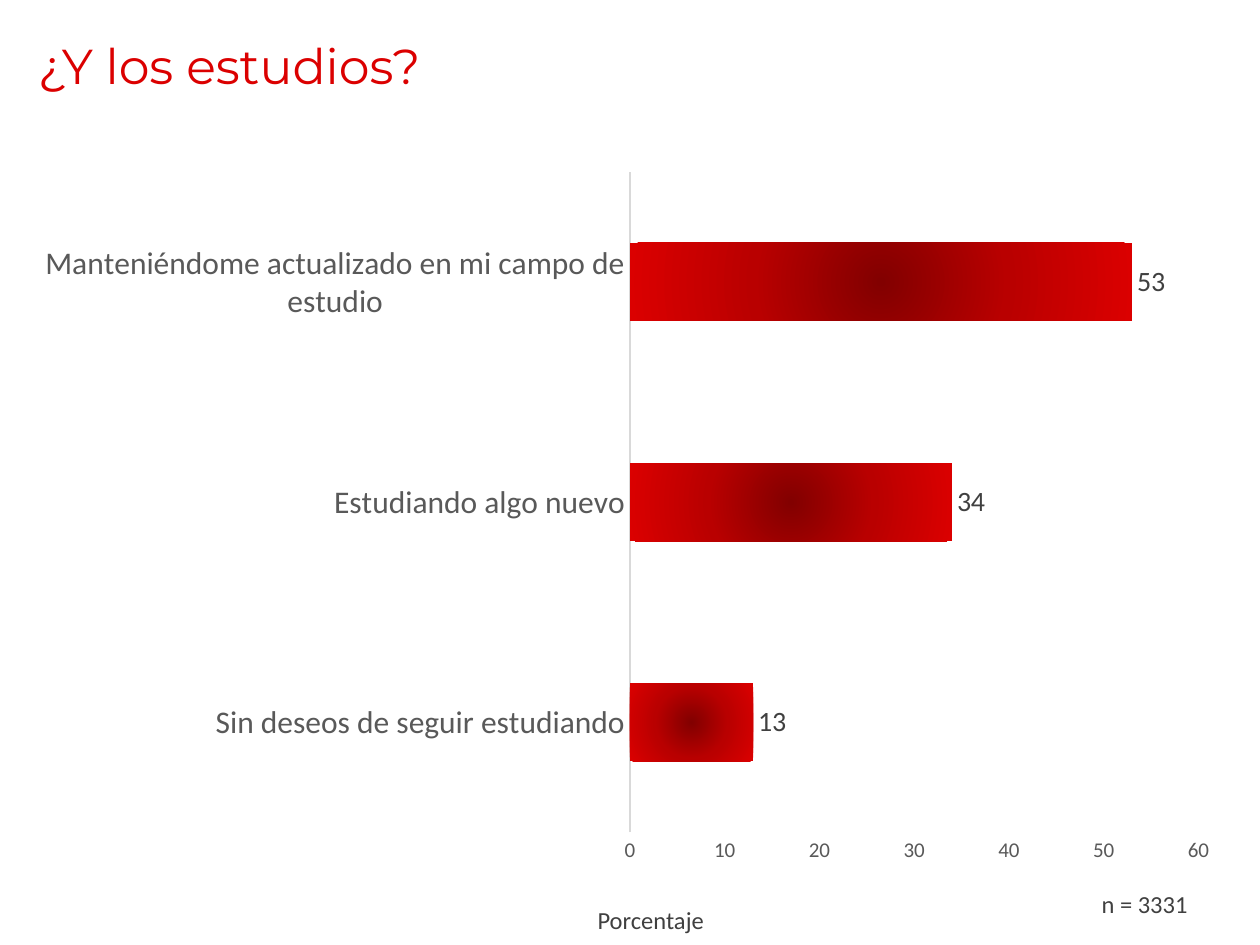
from pptx import Presentation
from pptx.chart.data import CategoryChartData
from pptx.dml.color import RGBColor
from pptx.enum.chart import XL_CHART_TYPE, XL_LABEL_POSITION, XL_TICK_MARK
from pptx.enum.text import MSO_ANCHOR, PP_ALIGN
from pptx.oxml import parse_xml
from pptx.oxml.ns import nsdecls
from pptx.util import Inches, Pt

RED, DARK, GREY, LINE = "DB0000", "404040", "595959", "D9D9D9"
STUDY = {
    "Sin deseos de seguir estudiando": 13,
    "Estudiando algo nuevo": 34,
    "Manteniéndome actualizado en mi campo de estudio": 53,
}
STOPS = [(0, "820000"), (50, "B90000"), (100, RED)]
PLOT = {"x": 0.5, "y": 0.02, "w": 0.47, "h": 0.92}


def color(code):
    """Turn a hex string into a colour."""
    return RGBColor.from_string(code)


def style(font, size, code, name="Calibri"):
    """Set size, colour and face of a font."""
    font.size, font.name = Pt(size), name
    font.color.rgb = color(code)


def place(shape, left, top, width, height):
    """Move and size a shape."""
    shape.left, shape.top = Inches(left), Inches(top)
    shape.width, shape.height = Inches(width), Inches(height)


def add_title(slide, text):
    """Fill and format the title placeholder."""
    title = slide.shapes.title
    place(title, 0.2, 0.1, 7.57, 0.83)
    frame = title.text_frame
    frame.text = text
    frame.vertical_anchor = MSO_ANCHOR.MIDDLE
    para = frame.paragraphs[0]
    para.alignment = PP_ALIGN.LEFT
    style(para.runs[0].font, 28, RED, "Montserrat")


def add_note(slide, text, left, top, width):
    """Add a centred note below the chart."""
    box = slide.shapes.add_textbox(
        Inches(left), Inches(top), Inches(width), Inches(0.4))
    frame = box.text_frame
    frame.word_wrap = True
    frame.vertical_anchor = MSO_ANCHOR.MIDDLE
    frame.text = text
    para = frame.paragraphs[0]
    para.alignment = PP_ALIGN.CENTER
    style(para.runs[0].font, 14, DARK)


def shade(bars):
    """Give the bars a radial gradient."""
    bars.format.fill.solid()
    solid = bars.format.fill
    stops = "".join(
        f'<a:gs pos="{pos * 1000}"><a:srgbClr val="{code}"/></a:gs>'
        for pos, code in STOPS)
    grad = parse_xml(
        f'<a:gradFill {nsdecls("a")} rotWithShape="1"><a:gsLst>{stops}</a:gsLst>'
        '<a:path path="circle"><a:fillToRect l="50000" t="50000" r="50000" '
        'b="50000"/></a:path></a:gradFill>')
    for old in bars.format.fill and bars._element.xpath("c:spPr/a:solidFill"):
        old.getparent().replace(old, grad)


def fix_plot(chart):
    """Set the inner plot area by fractions of the chart."""
    area = chart.element.xpath(".//c:plotArea")[0]
    for old in area.xpath("c:layout"):
        area.remove(old)
    modes = "".join(f'<c:{key}Mode val="edge"/>' for key in "xy")
    sizes = "".join(f'<c:{key} val="{val}"/>' for key, val in PLOT.items())
    area.insert(0, parse_xml(
        f'<c:layout {nsdecls("c")}><c:manualLayout><c:layoutTarget val="inner"/>'
        f'{modes}{sizes}</c:manualLayout></c:layout>'))


def set_axis(axis, size):
    """Format an axis without ticks or grid."""
    axis.has_major_gridlines = False
    axis.major_tick_mark = axis.minor_tick_mark = XL_TICK_MARK.NONE
    style(axis.tick_labels.font, size, GREY)


def add_bars(slide):
    """Add the bar chart of study plans."""
    data = CategoryChartData(number_format="###0")
    data.categories = list(STUDY)
    data.add_series("Series 1", list(STUDY.values()))
    chart = slide.shapes.add_chart(
        XL_CHART_TYPE.BAR_CLUSTERED, Inches(0.2), Inches(1.25),
        Inches(9.6), Inches(5.7), data).chart
    style(chart.font, 10, "000000")
    chart.has_legend = chart.has_title = False
    fix_plot(chart)

    cats, vals = chart.category_axis, chart.value_axis
    set_axis(cats, 18)
    cats.format.line.color.rgb = color(LINE)
    cats.format.line.width = Pt(0.75)
    set_axis(vals, 12)
    vals.format.line.fill.background()
    vals.minimum_scale, vals.maximum_scale, vals.major_unit = 0, 60, 10
    vals.tick_labels.number_format = "###0"
    vals.tick_labels.number_format_is_linked = False

    plot = chart.plots[0]
    plot.gap_width = 182
    plot.vary_by_categories = False
    bars = plot.series[0]
    shade(bars)
    labels = bars.data_labels
    labels.show_value = True
    labels.position = XL_LABEL_POSITION.OUTSIDE_END
    labels.number_format = "###0"
    labels.number_format_is_linked = False
    style(labels.font, 16, DARK)


def main():
    """Build and save the slide."""
    deck = Presentation()
    deck.slide_width, deck.slide_height = Inches(10), Inches(7.5)
    slide = deck.slides.add_slide(deck.slide_layouts[5])
    add_note(slide, "Porcentaje", 3.58, 7.1, 3.17)
    add_note(slide, "n = 3331", 8.37, 6.97, 1.43)
    add_title(slide, "¿Y los estudios?")
    add_bars(slide)
    deck.save("out.pptx")


if __name__ == "__main__":
    main()
